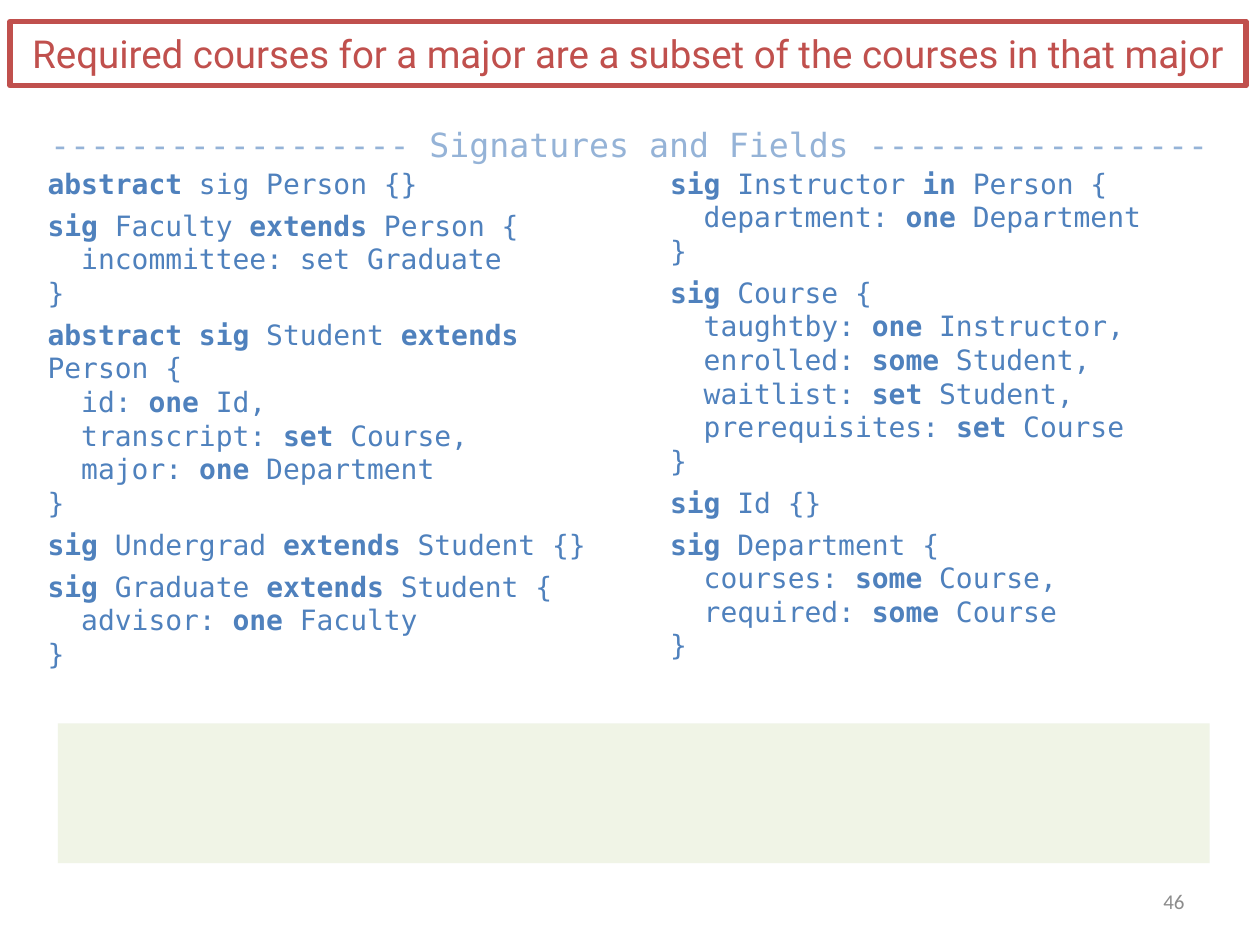
from pptx import Presentation
from pptx.dml.color import RGBColor
from pptx.enum.shapes import MSO_SHAPE as Shape
from pptx.enum.text import MSO_ANCHOR as Anchor, PP_ALIGN as Align
from pptx.oxml.ns import qn
from pptx.util import Inches, Pt
from lxml.etree import SubElement

COLORS = {
    "code": "4F81BD",
    "heading": "95B3D7",
    "title": "C0504D",
    "answer": "EBF1DE",
    "number": "8C8C8C",
}
MONO = "DejaVu Sans Mono"

# Asterisks enclose keywords in bold; each block is one signature.
LEFT_SIGNATURES = [
    "*abstract* sig Person {}",
    "*sig* Faculty *extends* Person {\n  incommittee: set Graduate\n}",
    "*abstract sig* Student *extends*\nPerson {\n  id: *one* Id,\n"
    "  transcript: *set* Course,\n  major: *one* Department\n}",
    "*sig* Undergrad *extends* Student {}",
    "*sig* Graduate *extends* Student {\n  advisor: *one* Faculty\n}",
]
RIGHT_SIGNATURES = [
    "*sig* Instructor *in* Person {\n  department: *one* Department\n}",
    "*sig* Course {\n  taughtby: *one* Instructor,\n  enrolled: *some* Student,\n"
    "  waitlist: *set* Student,\n  prerequisites: *set* Course\n}",
    "*sig* Id {}",
    "*sig* Department {\n  courses: *some* Course,\n  required: *some* Course\n}",
]


def color(name):
    return RGBColor.from_string(COLORS[name])


def apply(target, values):
    for name, value in values.items():
        setattr(target, name, value)


def add_span(para, text, font, size, color_name, bold=False):
    span = para.add_run()
    span.text = text
    apply(span.font, {"name": font, "size": Pt(size), "bold": bold})
    span.font.color.rgb = color(color_name)


def add_text(page, place, text, font, size, color_name, align=Align.LEFT, anchor=Anchor.TOP):
    box = page.shapes.add_textbox(*map(Inches, place))
    apply(box.text_frame, {"word_wrap": True, "vertical_anchor": anchor})
    para = box.text_frame.paragraphs[0]
    para.alignment = align
    add_span(para, text, font, size, color_name)


def add_rectangle(page, place):
    box = page.shapes.add_shape(Shape.RECTANGLE, *map(Inches, place))
    box.shadow.inherit = False
    return box


def add_title(page, place, text):
    box = add_rectangle(page, place)
    box.fill.background()
    box.line.color.rgb = color("title")
    box.line.width = Pt(3)
    apply(box.text_frame, {"word_wrap": True, "vertical_anchor": Anchor.MIDDLE})
    para = box.text_frame.paragraphs[0]
    para.alignment = Align.CENTER
    add_span(para, text, "Roboto", 22, "title")


def add_answer_area(page, place, opacity):
    box = add_rectangle(page, place)
    box.fill.solid()
    box.fill.fore_color.rgb = color("answer")
    box.line.fill.background()
    tint = box.fill._xPr.find(".//" + qn("a:srgbClr"))
    SubElement(tint, qn("a:alpha"), val=str(opacity * 1000))


def add_code(page, place, signatures):
    """Set one paragraph per line, with a gap after each signature."""
    box = page.shapes.add_textbox(*map(Inches, place))
    frame = box.text_frame
    frame.word_wrap = True
    lines = []
    for signature in signatures:
        *body, last = signature.split("\n")
        lines += [(line, 0) for line in body] + [(last, 4.8)]
    for index, (line, gap) in enumerate(lines):
        para = frame.add_paragraph() if index else frame.paragraphs[0]
        apply(para, {"line_spacing": Pt(19.2), "space_after": Pt(gap)})
        for part, text in enumerate(line.split("*")):
            if text:
                add_span(para, text, MONO, 16, "code", bold=part % 2 == 1)


def main():
    deck = Presentation()
    apply(deck, {"slide_width": Inches(10), "slide_height": Inches(7.5)})
    page = deck.slides.add_slide(deck.slide_layouts[6])

    add_text(page, (7.17, 6.95, 2.33, 0.4), "46", "Calibri", 12, "number",
             Align.RIGHT, Anchor.MIDDLE)
    add_code(page, (0.28, 1.27, 4.61, 4.17), LEFT_SIGNATURES)
    add_code(page, (5.22, 1.27, 4.38, 4.19), RIGHT_SIGNATURES)
    add_text(page, (0.3, 0.94, 9.47, 0.42),
             "------------------ Signatures and Fields -----------------",
             MONO, 19, "heading")
    add_title(page, (0.08, 0.17, 9.81, 0.51),
              "Required courses for a major are a subset of the courses in that major")
    add_answer_area(page, (0.46, 5.74, 9.14, 1.11), opacity=74)

    deck.save("out.pptx")


if __name__ == "__main__":
    main()
